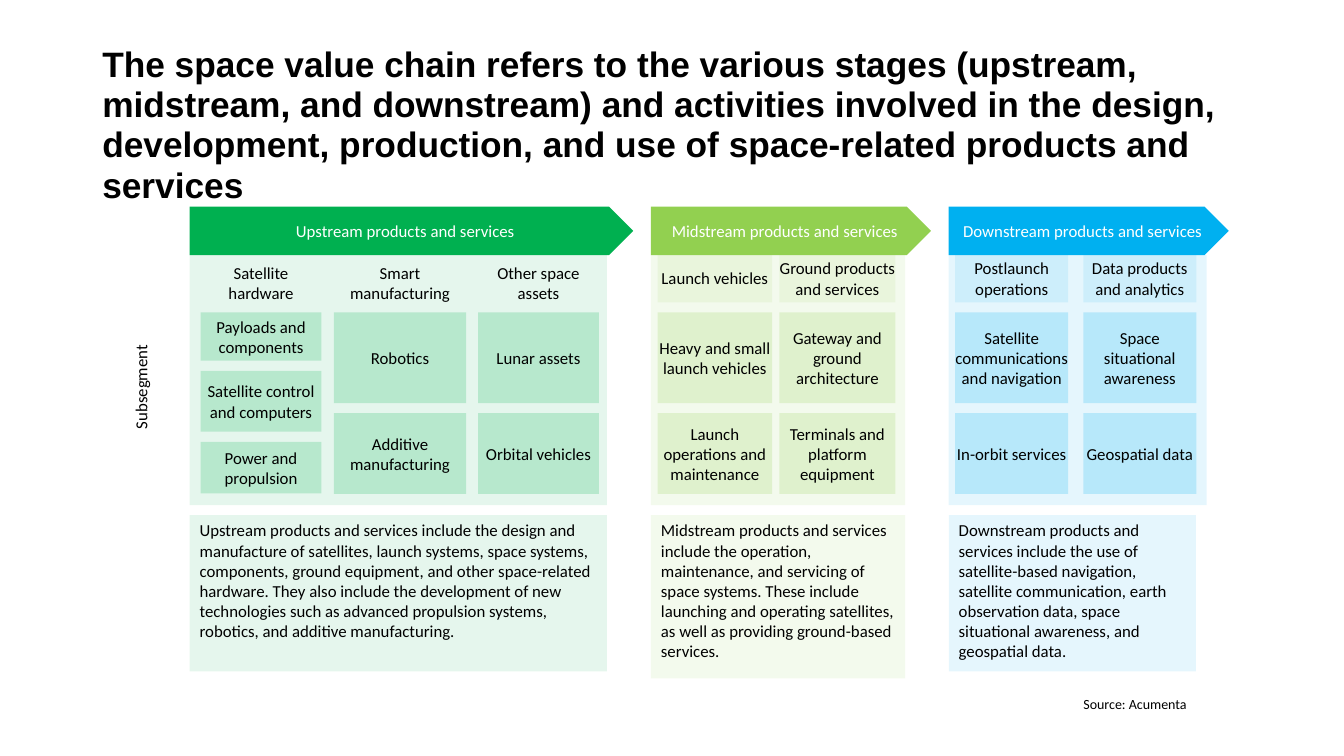
from lxml import etree
from pptx import Presentation
from pptx.dml.color import RGBColor
from pptx.enum.shapes import MSO_SHAPE as Shape
from pptx.enum.text import MSO_ANCHOR as Anchor, PP_ALIGN as Align
from pptx.oxml.ns import qn
from pptx.util import Pt


def color(hex_code):
    return RGBColor.from_string(hex_code)


def block(x, y, w, h, text="", fill=None, opacity=100, kind=Shape.RECTANGLE,
          font_color="000000", size=12, font="Calibri", label=True):
    """Draw a filled shape, or a text box when there is no fill."""
    frame = (Pt(x), Pt(y), Pt(w), Pt(h))
    if fill:
        shape = slide.shapes.add_shape(kind, *frame)
        shape.shadow.inherit = False
        shape.line.fill.background()
        shape.fill.solid()
        shape.fill.fore_color.rgb = color(fill)
        if opacity < 100:
            solid = shape.fill._xPr.find(qn("a:solidFill"))
            etree.SubElement(solid[0], qn("a:alpha"), val=str(opacity * 1000))
    else:
        shape = slide.shapes.add_textbox(*frame)
    if text:
        body = shape.text_frame
        body.word_wrap = True
        body.vertical_anchor = Anchor.MIDDLE if label else Anchor.TOP
        if label:
            body.margin_left = body.margin_right = 0
        paragraph = body.paragraphs[0]
        paragraph.text = text
        paragraph.alignment = Align.CENTER if label else Align.LEFT
        paragraph.font.size = Pt(size)
        paragraph.font.name = font
        paragraph.font.color.rgb = color(font_color)
    return shape


prs = Presentation()
prs.slide_width, prs.slide_height = Pt(960), Pt(540)
slide = prs.slides.add_slide(prs.slide_layouts[6])

# Title and source
title = block(66, 28.8, 828, 104.4,
              "The space value chain refers to the various stages (upstream, midstream, "
              "and downstream) and activities involved in the design, development, "
              "production, and use of space-related products and services",
              size=25.2, font="Arial", label=False)
title_line = title.text_frame.paragraphs[0]
title_line.font.bold = True
title_line.line_spacing = 0.95
block(766.8, 493.2, 151.2, 21.6, "Source: Acumenta", size=10, label=False)

# Value chain stages; each column is (x, width, heading, cell heights, cells)
HALVES = (64.8, 57.6)
THIRDS = (34.5, 43.5, 36.9)
stages = [
    dict(name="Upstream products and services", hue="00B050", x=135.5,
         arrow_w=316.8, panel_w=298, about_w=298, about_h=111.6,
         head_h=41, head_fill=None,
         about="Upstream products and services include the design and manufacture of "
               "satellites, launch systems, space systems, components, ground equipment, "
               "and other space-related hardware. They also include the development of "
               "new technologies such as advanced propulsion systems, robotics, and "
               "additive manufacturing.",
         columns=[
             (143.3, 86.4, "Satellite hardware", THIRDS,
              ["Payloads and components", "Satellite control and computers",
               "Power and propulsion"]),
             (238.5, 94.5, "Smart manufacturing", HALVES,
              ["Robotics", "Additive manufacturing"]),
             (341.5, 86.4, "Other space assets", HALVES,
              ["Lunar assets", "Orbital vehicles"])]),
    dict(name="Midstream products and services", hue="92D050", x=465,
         arrow_w=200, panel_w=181.5, about_w=181.5, about_h=116.6,
         head_h=34.5, head_fill="92D050",
         about="Midstream products and services include the operation, maintenance, and "
               "servicing of space systems. These include launching and operating "
               "satellites, as well as providing ground-based services.",
         columns=[
             (469.8, 81.7, "Launch vehicles", HALVES,
              ["Heavy and small launch vehicles", "Launch operations and maintenance"]),
             (556.7, 83, "Ground products and services", HALVES,
              ["Gateway and ground architecture", "Terminals and platform equipment"])]),
    dict(name="Downstream products and services", hue="00B0F0", x=677.7,
         arrow_w=200, panel_w=184.3, about_w=176.5, about_h=111.6,
         head_h=34.5, head_fill="00B0F0",
         about="Downstream products and services include the use of satellite-based "
               "navigation, satellite communication, earth observation data, space "
               "situational awareness, and geospatial data.",
         columns=[
             (682.3, 80.8, "Postlaunch operations", HALVES,
              ["Satellite communications and navigation", "In-orbit services"]),
             (773.8, 80.8, "Data products and analytics", HALVES,
              ["Space situational awareness", "Geospatial data"])]),
]

CELL_TOP, CELL_GAP = 223.2, 7.2

for stage in stages:
    x, hue = stage["x"], stage["hue"]

    # Pale panel and description below it
    block(x, 182.3, stage["panel_w"], 178.5, fill=hue, opacity=10)
    block(x, 368, stage["about_w"], stage["about_h"], stage["about"],
          fill=hue, opacity=10, label=False)

    # Column headings with their stacked cells
    for column_x, width, heading, heights, cells in stage["columns"]:
        block(column_x, 181.5, width, stage["head_h"], heading,
              fill=stage["head_fill"], opacity=10)
        y = CELL_TOP
        for cell, height in zip(cells, heights):
            block(column_x, y, width, height, cell, fill=hue, opacity=20)
            y += height + CELL_GAP

    # Stage arrow
    block(x, 147.6, stage["arrow_w"], 34.6, stage["name"], fill=hue,
          kind=Shape.PENTAGON, font_color="FFFFFF")

# Row label
subsegment = block(53.3, 259.2, 94.3, 34.6, "Subsegment")
subsegment.rotation = 270

prs.save("out.pptx")
